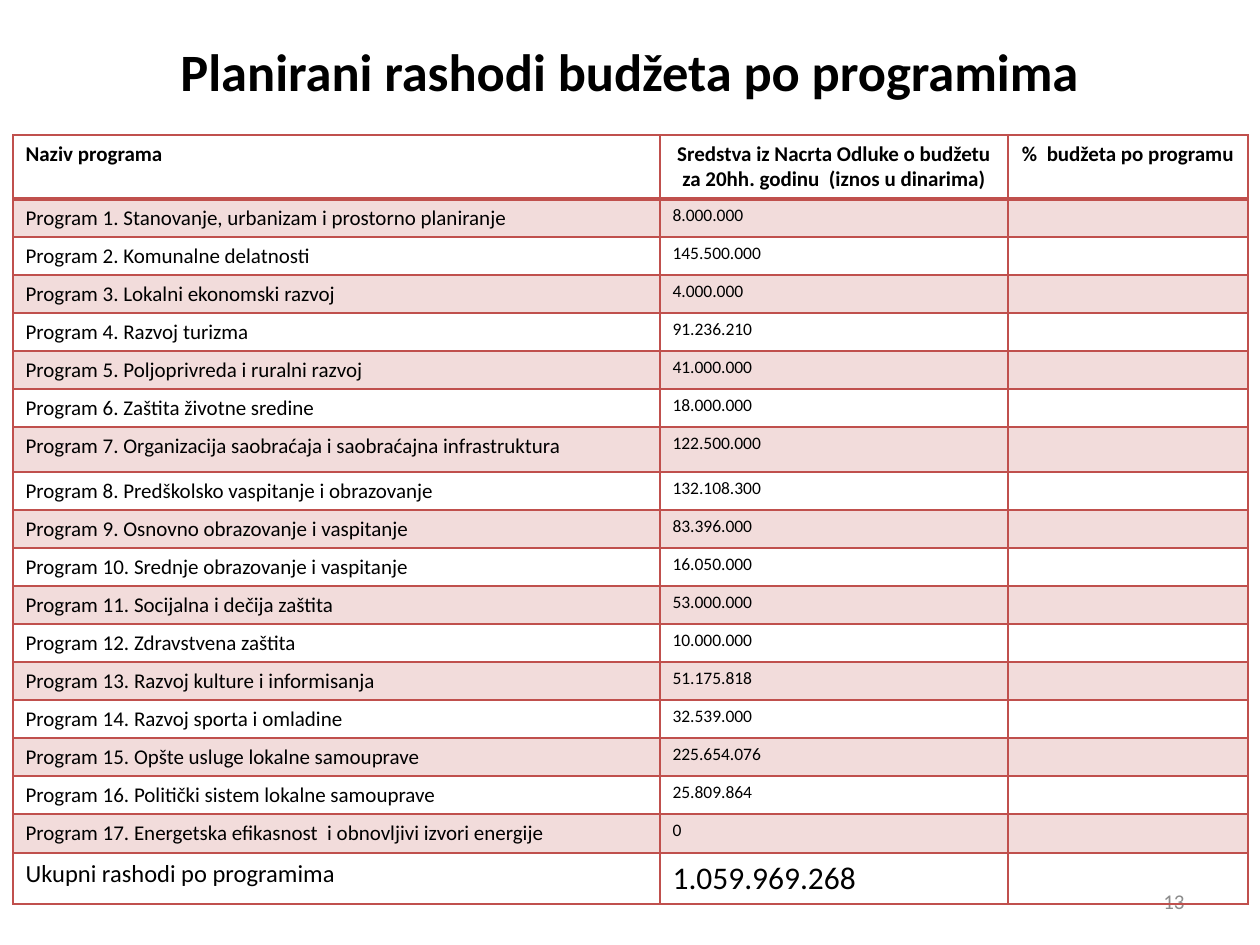
from dataclasses import dataclass

from pptx import Presentation
from pptx import util as u
from pptx.dml.color import RGBColor
from pptx.enum import text
from pptx.oxml.ns import qn
from lxml import etree

ALIGN, ANCHOR = text.PP_ALIGN, text.MSO_ANCHOR


@dataclass(frozen=True)
class Theme:
    face: str = "Calibri"
    ink: str = "000000"
    grey: str = "8C8C8C"
    red: str = "C0504D"
    tint: int = 20
    title: int = 30
    body: int = 12
    value: int = 10
    total: int = 14
    sum: int = 18


HEADS = [
    ("Naziv programa", ALIGN.LEFT),
    ("Sredstva iz Nacrta Odluke o budžetu za 20hh. godinu  (iznos u dinarima)", ALIGN.CENTER),
    ("%  budžeta po programu ", ALIGN.CENTER),
]
ITEMS = [
    ("Stanovanje, urbanizam i prostorno planiranje", "8.000.000"),
    ("Komunalne delatnosti", "145.500.000"),
    ("Lokalni ekonomski razvoj", "4.000.000"),
    ("Razvoj turizma", "91.236.210"),
    ("Poljoprivreda i ruralni razvoj", "41.000.000"),
    ("Zaštita životne sredine", "18.000.000"),
    ("Organizacija saobraćaja i saobraćajna infrastruktura", "122.500.000"),
    ("Predškolsko vaspitanje i obrazovanje", "132.108.300"),
    ("Osnovno obrazovanje i vaspitanje", "83.396.000"),
    ("Srednje obrazovanje i vaspitanje", "16.050.000"),
    ("Socijalna i dečija zaštita", "53.000.000"),
    ("Zdravstvena zaštita", "10.000.000"),
    ("Razvoj kulture i informisanja", "51.175.818"),
    ("Razvoj sporta i omladine", "32.539.000"),
    ("Opšte usluge lokalne samouprave", "225.654.076"),
    ("Politički sistem lokalne samouprave", "25.809.864"),
    ("Energetska efikasnost  i obnovljivi izvori energije", "0"),
]
COLS = [647, 348, 240]
ROWS = [64] + [38] * 6 + [45] + [38] * 9 + [39, 51]


def px(n):
    return u.Emu(round(n * 914400 / 126))


class Deck:
    def __init__(self, theme):
        self.theme = theme
        self.prs = Presentation()
        self.prs.slide_width, self.prs.slide_height = px(1260), px(945)
        self.slide = self.prs.slides.add_slide(self.prs.slide_layouts[5])

    def label(self, frame, words, size, color, align=ALIGN.LEFT, bold=False):
        frame.word_wrap = True
        para = frame.paragraphs[0]
        para.text = words
        para.alignment = align
        font = para.font
        font.name, font.size, font.bold = self.theme.face, u.Pt(size), bold
        font.color.rgb = RGBColor.from_string(color)
        if not words:
            # An empty cell takes its line height from the end mark.
            para._p.get_or_add_endParaRPr().set("sz", str(size * 100))

    def title(self, words, x, y, w, h):
        box = self.slide.shapes.title
        box.left, box.top, box.width, box.height = map(px, (x, y, w, h))
        box.text_frame.vertical_anchor = ANCHOR.MIDDLE
        self.label(box.text_frame, words, self.theme.title, self.theme.ink, ALIGN.CENTER, True)

    def number(self, words, x, y, w, h):
        frame = self.slide.shapes.add_textbox(*map(px, (x, y, w, h))).text_frame
        frame.vertical_anchor = ANCHOR.MIDDLE
        self.label(frame, words, self.theme.body, self.theme.grey, ALIGN.RIGHT)

    def grid(self, x, y, cols, rows):
        frame = self.slide.shapes.add_table(
            len(rows), len(cols), px(x), px(y), px(sum(cols)), px(sum(rows)))
        table = frame.table
        table.first_row = table.horz_banding = False
        for col, w in zip(table.columns, cols):
            col.width = px(w)
        for row, h in zip(table.rows, rows):
            row.height = px(h)
        return table

    def edges(self, cell, top=1, bottom=1):
        """Rule the four sides of a cell; widths are in points."""
        props = cell._tc.get_or_add_tcPr()
        for side, width in zip("LRTB", (1, 1, top, bottom)):
            line = etree.SubElement(props, qn(f"a:ln{side}"), w=str(u.Pt(width)))
            fill = etree.SubElement(line, qn("a:solidFill"))
            etree.SubElement(fill, qn("a:srgbClr"), val=self.theme.red)

    def shade(self, cell, on):
        if not on:
            cell.fill.background()
            return
        cell.fill.solid()
        cell.fill.fore_color.rgb = RGBColor.from_string(self.theme.red)
        color = cell._tc.tcPr.find(qn("a:solidFill")).find(qn("a:srgbClr"))
        etree.SubElement(color, qn("a:alpha"), val=str(self.theme.tint * 1000))

    def budget(self, x, y):
        t = self.theme
        table = self.grid(x, y, COLS, ROWS)
        last = len(ROWS) - 1
        lines = [[(words, t.body, align, True) for words, align in HEADS]]
        pairs = [(f"Program {i}. {name}", cost, t.body, t.value)
                 for i, (name, cost) in enumerate(ITEMS, 1)]
        pairs.append(("Ukupni rashodi po programima", "1.059.969.268", t.total, t.sum))
        for name, cost, big, small in pairs:
            lines.append([(name, big, ALIGN.LEFT, False),
                          (cost, small, ALIGN.LEFT, False),
                          ("", t.body, ALIGN.LEFT, False)])
        for r, line in enumerate(lines):
            for c, (words, size, align, bold) in enumerate(line):
                cell = table.cell(r, c)
                self.label(cell.text_frame, words, size, t.ink, align, bold)
                self.edges(cell, top=2 if r == 1 else 1, bottom=2 if r == 0 else 1)
                self.shade(cell, r % 2 == 1 and r < last)


def main():
    deck = Deck(Theme())
    deck.title("Planirani rashodi budžeta po programima", 93, 17, 1074, 107)
    deck.number("13", 903, 876, 294, 50)
    deck.budget(13, 135)
    deck.prs.save("out.pptx")


if __name__ == "__main__":
    main()
